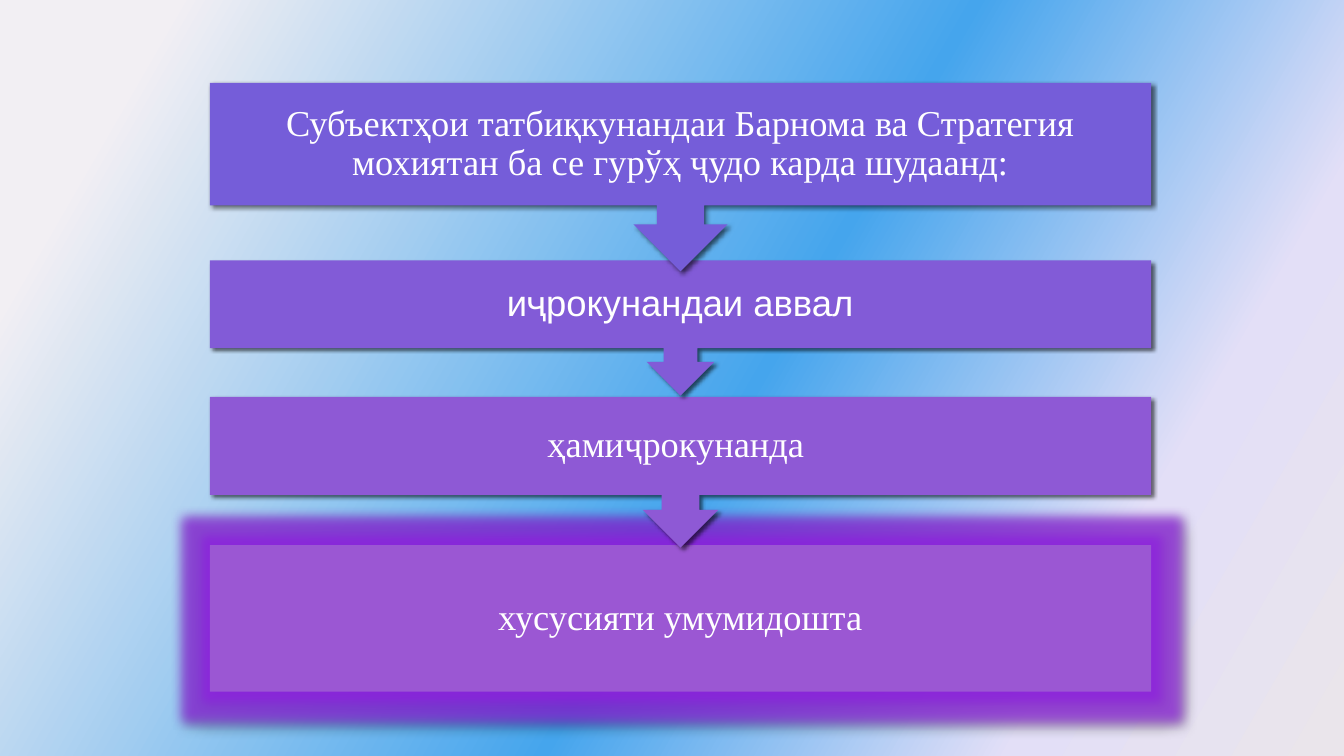
"""Builds a slide with four stacked steps, each pointing down to the next."""
from dataclasses import dataclass

from lxml import etree
from pptx import Presentation
from pptx.dml.color import RGBColor
from pptx.enum.shapes import MSO_SHAPE
from pptx.enum.text import MSO_ANCHOR, PP_ALIGN
from pptx.oxml.ns import qn
from pptx.util import Cm, Pt

RECTANGLE = MSO_SHAPE.RECTANGLE
CALLOUT = MSO_SHAPE.DOWN_ARROW_CALLOUT
MIDDLE = MSO_ANCHOR.MIDDLE
CENTER = PP_ALIGN.CENTER


@dataclass(frozen=True)
class Theme:
    background: tuple = ((10, "F2EFF3"), (55, "45A5ED"), (81, "E3DFF7"), (100, "EAE5EB"))
    steps: tuple = ("755DD9", "825BD7", "8E59D5", "9B57D3")
    text: str = "FFFFFF"
    shadow: str = "000000"
    glow: str = "8E20E0"
    serif: str = "Times New Roman"
    sans: str = "Arial"
    size: int = 26


def add_node(parent, tag, **attributes):
    return etree.SubElement(parent, qn(tag), {name: str(value) for name, value in attributes.items()})


def add_effect(effects, tag, color, alpha, **attributes):
    effect = add_node(effects, tag, **attributes)
    add_node(add_node(effect, "a:srgbClr", val=color), "a:alpha", val=alpha * 1000)


theme = Theme()
deck = Presentation()
deck.slide_width, deck.slide_height = Cm(33.87), Cm(19.05)
page = deck.slides.add_slide(deck.slide_layouts[6])

page.background.fill.gradient()
gradient = page.element.find(".//" + qn("a:gradFill"))
for child in list(gradient):
    gradient.remove(child)
stops = add_node(gradient, "a:gsLst")
for position, color in theme.background:
    add_node(add_node(stops, "a:gs", pos=position * 1000), "a:srgbClr", val=color)
add_node(gradient, "a:lin", ang=30 * 60000, scaled=0)

steps = [
    (2.09, 4.75, CALLOUT, theme.serif,
     "Субъектҳои татбиқкунандаи Барнома ва Стратегия мохиятан ба се гурўҳ ҷудо карда шудаанд:"),
    (6.56, 3.41, CALLOUT, theme.sans, "иҷрокунандаи аввал"),
    (10, 3.8, CALLOUT, theme.serif, "ҳамиҷрокунанда "),
    (13.74, 3.69, RECTANGLE, theme.serif, "хусусияти умумидошта"),
]

for (top, height, outline, font, wording), color in reversed(list(zip(steps, theme.steps))):
    box = page.shapes.add_shape(outline, Cm(5.29), Cm(top), Cm(23.72), Cm(height))
    box.fill.solid()
    box.fill.fore_color.rgb = RGBColor.from_string(color)
    box.line.fill.background()
    box.shadow.inherit = False

    effects = box.element.spPr.find(qn("a:effectLst"))
    is_last = outline == RECTANGLE
    if is_last:
        add_effect(effects, "a:glow", theme.glow, 70, rad=Pt(14))
    blur, distance, alpha = (4, 3, 40) if is_last else (3, 2, 60)
    add_effect(effects, "a:outerShdw", theme.shadow, alpha, blurRad=Pt(blur),
               dist=Pt(distance), dir=45 * 60000, algn="ctr", rotWithShape=0)

    frame = box.text_frame
    frame.word_wrap = True
    frame.vertical_anchor = MIDDLE
    frame.margin_left = frame.margin_right = Cm(0.5)
    frame.margin_top = frame.margin_bottom = Cm(0.5)
    para = frame.paragraphs[0]
    para.alignment = CENTER
    para.line_spacing = 0.9
    span = para.add_run()
    span.text = wording
    span.font.name = font
    span.font.size = Pt(theme.size)
    span.font.color.rgb = RGBColor.from_string(theme.text)

deck.save("out.pptx")
